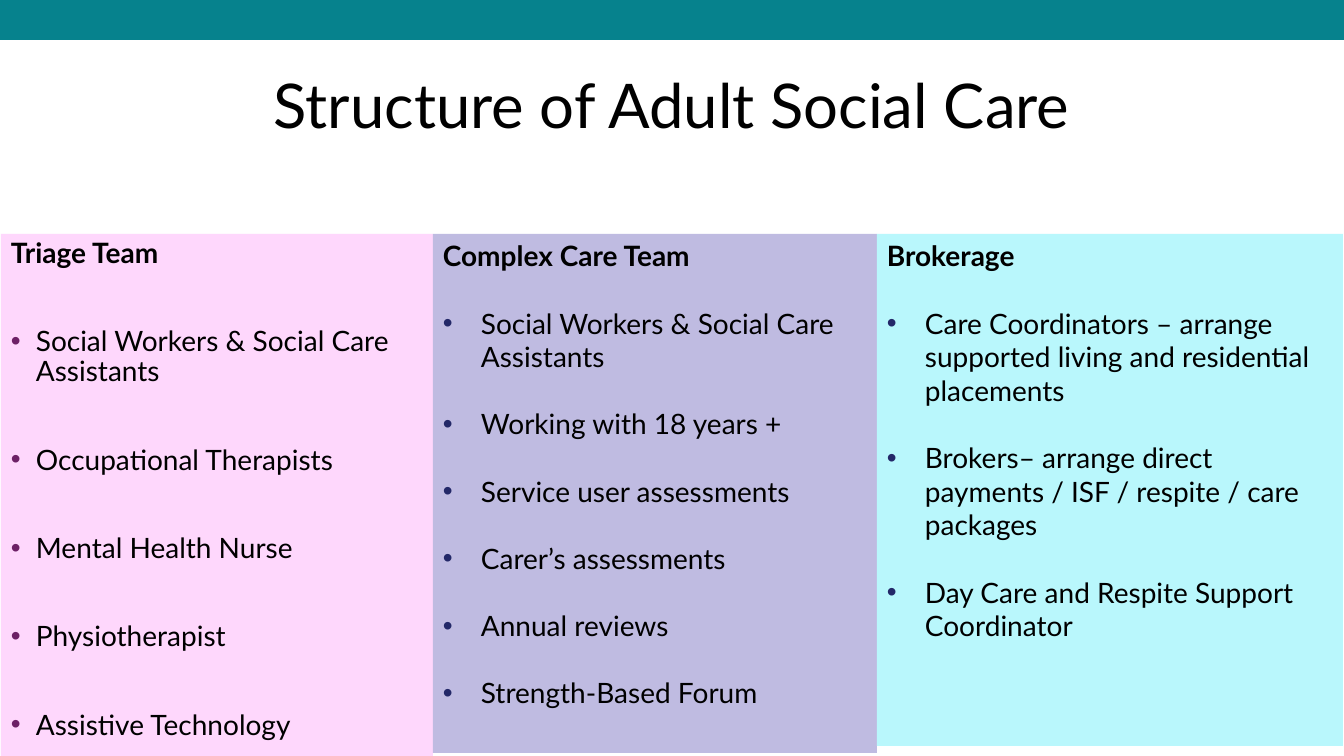
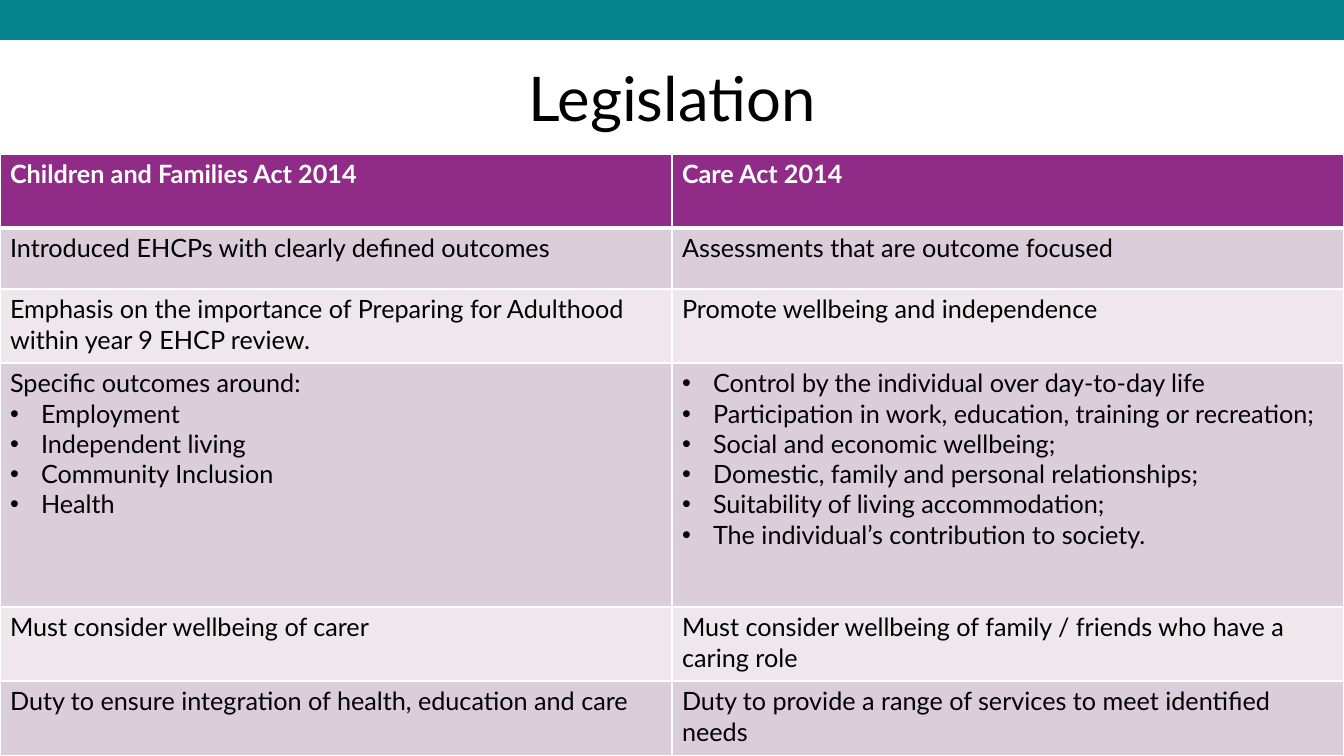
import pptx
import pptx.util
import pptx.oxml.ns
from pptx.dml.color import RGBColor
from pptx.enum.shapes import MSO_SHAPE
from pptx.enum.text import MSO_ANCHOR, PP_ALIGN
from lxml import etree

SLIDE_W, SLIDE_H = 1344, 756
EMU_PER_PX = 12192000 / SLIDE_W
FONT = "Lato"

BLACK = RGBColor(0x00, 0x00, 0x00)
WHITE = RGBColor(0xFF, 0xFF, 0xFF)
TEAL = RGBColor(0x06, 0x82, 0x8D)
PINK = RGBColor(0xFE, 0xD7, 0xFC)
LAVENDER = RGBColor(0xBF, 0xBB, 0xE1)
AQUA = RGBColor(0xB9, 0xF7, 0xFC)
PLUM = RGBColor(0x6D, 0x20, 0x66)
NAVY = RGBColor(0x23, 0x28, 0x68)
PURPLE = RGBColor(0x91, 0x2B, 0x88)
ROW_DARK = RGBColor(0xDC, 0xCD, 0xDA)
ROW_LIGHT = RGBColor(0xEE, 0xE8, 0xED)

TITLE = {"size": pptx.util.Pt(44), "bold": False}
TEAM_HEAD = {"size": pptx.util.Pt(20), "bold": True}
TEAM_ITEM = {"size": pptx.util.Pt(20), "bold": False}
TABLE_HEAD = {"size": pptx.util.Pt(18), "bold": True}
TABLE_TEXT = {"size": pptx.util.Pt(18), "bold": False}

TEAMS_TOP = 234
TIGHT = {"gap": 41.5, "indent": 25, "bullet": PLUM, "line": 0.9}
LOOSE = {"gap": 24, "indent": 38, "bullet": NAVY, "line": 1.0}
TEAMS = [
    ("Triage Team", 432, 522, PINK, TIGHT, [
        "Social Workers & Social Care Assistants",
        "Occupational Therapists",
        "Mental Health Nurse",
        "Physiotherapist",
        "Assistive Technology",
    ]),
    ("Complex Care Team", 444, 519, LAVENDER, LOOSE, [
        "Social Workers & Social Care Assistants",
        "Working with 18 years +",
        "Service user assessments",
        "Carer’s assessments",
        "Annual reviews",
        "Strength-Based Forum",
    ]),
    ("Brokerage", 466, 512, AQUA, LOOSE, [
        "Care Coordinators – arrange supported living and residential placements",
        "Brokers– arrange direct payments / ISF / respite / care packages",
        "Day Care and Respite Support Coordinator",
    ]),
]

TABLE_TOP = 154
TABLE_INDENT = 31
# Each row: height, then a (lead line, bullets) pair for each cell.
ACTS = [
    (74, ("Children and Families Act 2014", []), ("Care Act 2014", [])),
    (61, ("Introduced EHCPs with clearly defined outcomes", []),
     ("Assessments that are outcome focused", [])),
    (74, ("Emphasis on the importance of Preparing for Adulthood within year 9 EHCP review.", []),
     ("Promote wellbeing and independence", [])),
    (244, ("Specific outcomes around:", [
        "Employment",
        "Independent living",
        "Community Inclusion",
        "Health",
    ]), (None, [
        "Control by the individual over day-to-day life",
        "Participation in work, education, training or recreation;",
        "Social and economic wellbeing;",
        "Domestic, family and personal relationships;",
        "Suitability of living accommodation;",
        "The individual’s contribution to society.",
    ])),
    (74, ("Must consider wellbeing of carer", []),
     ("Must consider wellbeing of family / friends who have a caring role", [])),
    (75, ("Duty to ensure integration of health, education and care", []),
     ("Duty to provide a range of services to meet identified needs", [])),
]


def px(n):
    return pptx.util.Emu(round(n * EMU_PER_PX))


def sub(parent, tag, **attrs):
    return etree.SubElement(parent, pptx.oxml.ns.qn(tag), attrs)


def add_bullet(p, indent, color):
    pPr = p._p.get_or_add_pPr()
    pPr.set("marL", str(px(indent)))
    pPr.set("indent", str(-px(indent)))
    sub(sub(pPr, "a:buClr"), "a:srgbClr", val=str(color))
    sub(pPr, "a:buFont", typeface="Arial")
    sub(pPr, "a:buChar", char="•")


def add_paragraph(tf, text, font, color=BLACK, **layout):
    """Fill the frame's empty first paragraph, or append a new one."""
    p = tf.paragraphs[0]
    if p.runs:
        p = tf.add_paragraph()
    for name, value in layout.items():
        setattr(p, name, value)
    r = p.add_run()
    r.text = text
    r.font.name = FONT
    r.font.color.rgb = color
    for name, value in font.items():
        setattr(r.font, name, value)
    return p


def add_rect(slide, left, top, width, height, fill):
    sp = slide.shapes.add_shape(MSO_SHAPE.RECTANGLE, px(left), px(top), px(width), px(height))
    sp.shadow.inherit = False
    sp.fill.solid()
    sp.fill.fore_color.rgb = fill
    sp.line.fill.background()
    return sp


def add_slide(prs, title, top, height):
    """Add a blank slide with the teal band and a centred title."""
    slide = prs.slides.add_slide(prs.slide_layouts[6])
    add_rect(slide, 0, 0, SLIDE_W, 40, TEAL)
    margin = 93
    box = slide.shapes.add_textbox(px(margin), px(top), px(SLIDE_W - 2 * margin), px(height))
    tf = box.text_frame
    tf.word_wrap = True
    tf.vertical_anchor = MSO_ANCHOR.MIDDLE
    add_paragraph(tf, title, TITLE, alignment=PP_ALIGN.CENTER, line_spacing=0.9)
    return slide


def add_team(slide, left, name, width, height, fill, style, items):
    tf = add_rect(slide, left, TEAMS_TOP, width, height, fill).text_frame
    tf.word_wrap = True
    tf.vertical_anchor = MSO_ANCHOR.TOP
    layout = {"alignment": PP_ALIGN.LEFT, "line_spacing": style["line"]}
    add_paragraph(tf, name, TEAM_HEAD, **layout)
    for item in items:
        p = add_paragraph(tf, item, TEAM_ITEM, space_before=pptx.util.Pt(style["gap"]), **layout)
        add_bullet(p, style["indent"], style["bullet"])


def set_borders(cell, top, bottom):
    """Draw white borders; top and bottom are widths in points."""
    tcPr = cell._tc.get_or_add_tcPr()
    sides = [("a:lnL", 1), ("a:lnR", 1), ("a:lnT", top), ("a:lnB", bottom)]
    for i, (tag, width) in enumerate(sides):
        ln = sub(tcPr, tag, w=str(pptx.util.Pt(width)))
        sub(sub(ln, "a:solidFill"), "a:srgbClr", val=str(WHITE))
        tcPr.insert(i, ln)


def fill_cell(cell, row, lead, bullets):
    is_head = row == 0
    cell.fill.solid()
    cell.fill.fore_color.rgb = PURPLE if is_head else (ROW_LIGHT, ROW_DARK)[row % 2]
    set_borders(cell, top=3 if row == 1 else 1, bottom=3 if is_head else 1)
    tf = cell.text_frame
    if lead:
        add_paragraph(tf, lead, TABLE_HEAD if is_head else TABLE_TEXT,
                      WHITE if is_head else BLACK)
    for item in bullets:
        add_bullet(add_paragraph(tf, item, TABLE_TEXT), TABLE_INDENT, BLACK)


def add_acts_table(slide):
    frame = slide.shapes.add_table(len(ACTS), 2, px(0), px(TABLE_TOP),
                                   px(SLIDE_W), px(SLIDE_H - TABLE_TOP))
    table = frame.table
    for row, (height, *cells) in enumerate(ACTS):
        table.rows[row].height = px(height)
        for col, (lead, bullets) in enumerate(cells):
            fill_cell(table.cell(row, col), row, lead, bullets)


def main():
    prs = pptx.Presentation()
    prs.slide_width, prs.slide_height = px(SLIDE_W), px(SLIDE_H)

    slide = add_slide(prs, "Structure of Adult Social Care", 50, 117)
    left = 1
    for name, width, *rest in TEAMS:
        add_team(slide, left, name, width, *rest)
        left += width

    add_acts_table(add_slide(prs, "Legislation", 29, 146))
    prs.save("out.pptx")


if __name__ == "__main__":
    main()
